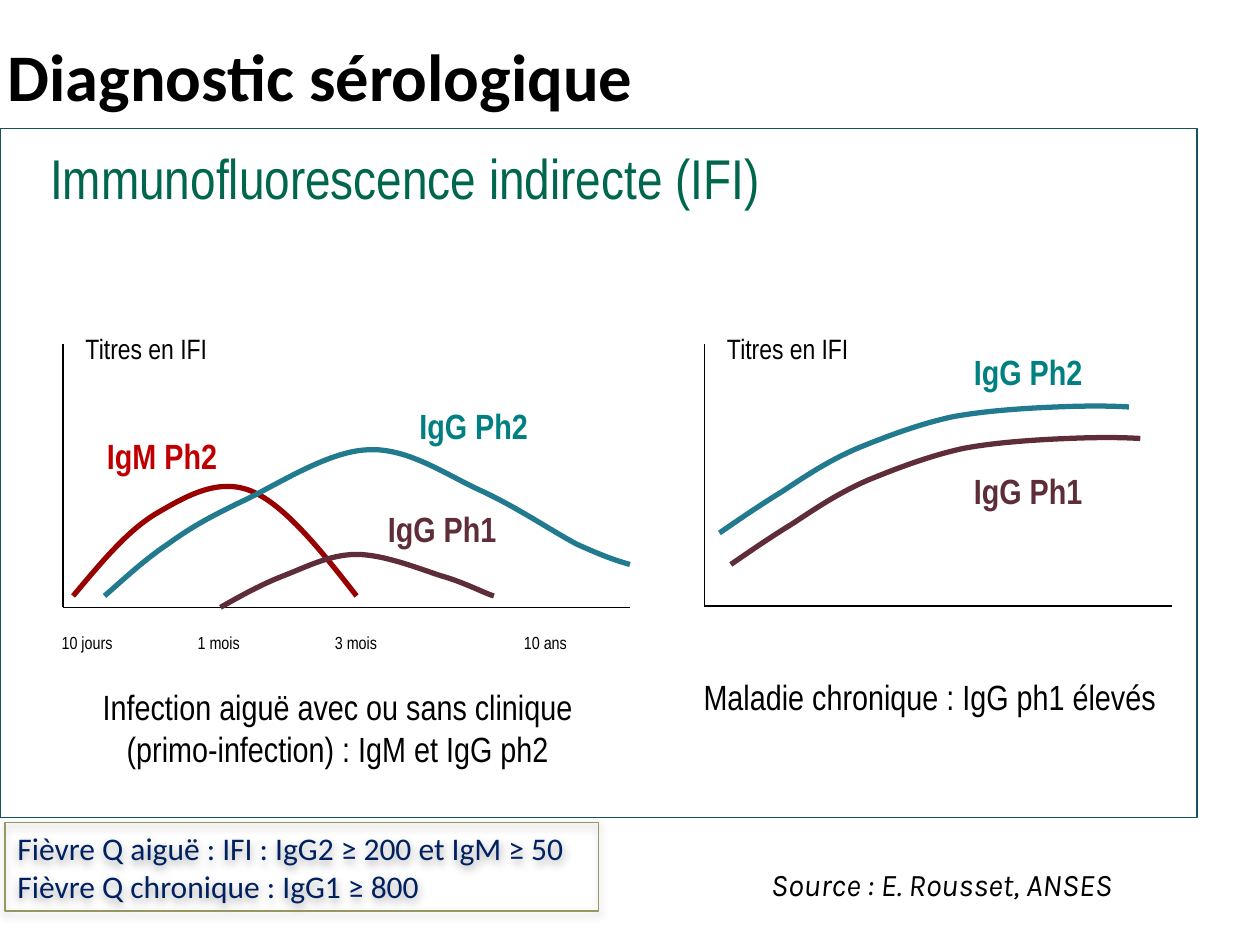
from lxml import etree
from pptx import Presentation
from pptx import util as u
from pptx.dml.color import RGBColor
from pptx.enum import shapes, text
from pptx.oxml import ns

COLORS = {
    "white": "FFFFFF", "black": "000000", "panel": "175160", "heading": "00664D",
    "igm_curve": "990000", "igm_label": "C00000", "phase2_curve": "227A8F",
    "phase2_label": "008080", "phase1": "5E2D37", "note_line": "979762", "note": "002060",
}
NARROW = "Arial Narrow"

IGM = [(0.08, 2), (0.3, 1.74), (0.51, 1.48), (0.75, 1.34), (0.99, 1.2),
       (1.24, 1.06), (1.5, 1.17), (1.76, 1.28), (2.05, 1.64), (2.33, 2)]
ACUTE_PHASE2 = [(0.33, 2), (0.49, 1.86), (0.65, 1.71), (0.83, 1.59), (1.01, 1.46),
                (1.15, 1.38), (1.42, 1.25), (1.68, 1.13), (2.1, 0.85), (2.42, 0.84),
                (2.74, 0.82), (3.06, 1.05), (3.33, 1.17), (3.61, 1.3), (3.89, 1.49),
                (4.08, 1.59), (4.28, 1.68), (4.39, 1.72), (4.5, 1.75)]
ACUTE_PHASE1 = [(1.25, 2.09), (1.41, 2), (1.57, 1.91), (1.75, 1.84), (1.93, 1.77),
                (2.12, 1.67), (2.33, 1.67), (2.54, 1.67), (2.82, 1.78), (3, 1.84),
                (3.18, 1.89), (3.35, 1.98), (3.42, 2)]
CHRONIC_PHASE2 = [(0.12, 1.5), (0.28, 1.39), (0.44, 1.28), (0.62, 1.17), (0.8, 1.05),
                  (0.98, 0.93), (1.21, 0.83), (1.43, 0.74), (1.69, 0.64), (1.96, 0.58),
                  (2.22, 0.53), (2.55, 0.51), (2.79, 0.5), (3.03, 0.49), (3.2, 0.49),
                  (3.37, 0.5)]
CHRONIC_PHASE1 = [(x + 0.09, y + 0.25) for x, y in CHRONIC_PHASE2]


def color(name):
    return RGBColor.from_string(COLORS[name])


def inches(values):
    return [u.Inches(value) for value in values]


def write(frame, lines, size, ink, font=NARROW, bold=False, italic=False,
          align=text.PP_ALIGN.LEFT):
    for index, line in enumerate(lines):
        paragraph = frame.paragraphs[0] if index == 0 else frame.add_paragraph()
        paragraph.alignment = align
        run = paragraph.add_run()
        run.text = line
        run.font.name = font
        run.font.size = u.Pt(size)
        run.font.bold = bold
        run.font.italic = italic
        run.font.color.rgb = color(ink)


def add_label(slide, box, lines, size, ink, wrap=False, **style):
    frame = slide.shapes.add_textbox(*inches(box)).text_frame
    frame.word_wrap = wrap
    if not wrap:
        frame.auto_size = text.MSO_AUTO_SIZE.SHAPE_TO_FIT_TEXT
    write(frame, lines, size, ink, **style)
    return frame


def add_rectangle(slide, box, fill=None, line=None):
    shape = slide.shapes.add_shape(shapes.MSO_SHAPE.RECTANGLE, *inches(box))
    shape.shadow.inherit = False
    if fill:
        shape.fill.solid()
        shape.fill.fore_color.rgb = color(fill)
    else:
        shape.fill.background()
    if line:
        shape.line.color.rgb = color(line)
        shape.line.width = u.Pt(0.75)
    else:
        shape.line.fill.background()
    return shape


def add_axis(slide, start, end):
    axis = slide.shapes.add_connector(shapes.MSO_CONNECTOR.STRAIGHT, *inches(start + end))
    axis.line.color.rgb = color("black")
    axis.line.width = u.Pt(0.75)
    etree.SubElement(axis._element.spPr, ns.qn("a:effectLst"))


def add_curve(slide, left, top, points, ink):
    start, *controls = [inches((left + x, top + y)) for x, y in points]
    builder = slide.shapes.build_freeform(*start)
    builder.add_line_segments(controls, close=False)
    shape = builder.convert_to_shape()
    segments = list(shape._element.iter(ns.qn("a:lnTo")))
    for index in range(0, len(segments), 3):
        bezier = etree.Element(ns.qn("a:cubicBezTo"))
        segments[index].addprevious(bezier)
        for segment in segments[index:index + 3]:
            bezier.append(segment[0])
            segment.getparent().remove(segment)
    shape.shadow.inherit = False
    shape.fill.background()
    shape.line.color.rgb = color(ink)
    shape.line.width = u.Pt(3)


def add_title(slide, box):
    title = slide.shapes.title
    title.left, title.top, title.width, title.height = inches(box)
    title.text_frame.vertical_anchor = text.MSO_ANCHOR.MIDDLE
    write(title.text_frame, ["Diagnostic sérologique"], 38, "black", "Calibri", bold=True)


def add_panel(slide, box):
    left, top, width, height = box
    add_rectangle(slide, box, "white", "panel")
    frame = add_label(slide, (left + 0.3, top + 0.07, width - 0.5, height - 0.22),
                      ["Immunofluorescence indirecte (IFI)"], 32, "heading", wrap=True)
    frame.paragraphs[0].space_before = u.Pt(6.4)


def add_titre_plot(slide, box, curves, names, ticks=()):
    left, top, width, height = box
    bottom = top + height
    add_axis(slide, (left, top), (left, bottom))
    add_axis(slide, (left, bottom), (left + width, bottom))
    for points, ink in curves:
        add_curve(slide, left, top, points, ink)
    for name, x, y, ink in names:
        add_label(slide, (left + x, top + y, 1.08, 0.43), [name], 20, ink, bold=True)
    for name, x, tick_width in ticks:
        add_label(slide, (left + x, bottom + 0.15, tick_width, 0.27), [name], 10, "black")
    add_label(slide, (left + 0.08, top - 0.15, 1.18, 0.37), ["Titres en IFI"], 16, "black")


def add_caption(slide, box, lines):
    add_label(slide, box, lines, 20, "black", wrap=True, align=text.PP_ALIGN.CENTER)


def add_threshold_note(slide, box):
    shape = add_rectangle(slide, box, line="note_line")
    effects = shape._element.spPr.find(ns.qn("a:effectLst"))
    shadow = etree.SubElement(effects, ns.qn("a:outerShdw"), blurRad=str(u.Pt(5)),
                              dist=str(u.Pt(1.8)), dir="5400000", rotWithShape="0")
    shade = etree.SubElement(shadow, ns.qn("a:srgbClr"), val=COLORS["black"])
    etree.SubElement(shade, ns.qn("a:alpha"), val="35000")
    frame = shape.text_frame
    frame.word_wrap = True
    frame.vertical_anchor = text.MSO_ANCHOR.MIDDLE
    write(frame, ["Fièvre Q aiguë : IFI : IgG2 ≥ 200 et IgM ≥ 50",
                  "Fièvre Q chronique : IgG1 ≥ 800"], 18, "note", "Calibri")


def main():
    presentation = Presentation()
    presentation.slide_width, presentation.slide_height = inches((10, 7.5))
    slide = presentation.slides.add_slide(presentation.slide_layouts[5])
    add_title(slide, (-0.04, -0.03, 10.04, 1.25))
    add_panel(slide, (0, 1.02, 9.5, 5.47))
    add_titre_plot(
        slide, (0.5, 2.73, 4.5, 2.09),
        [(IGM, "igm_curve"), (ACUTE_PHASE2, "phase2_curve"), (ACUTE_PHASE1, "phase1")],
        [("IgG Ph2", 2.73, 0.43, "phase2_label"), ("IgG Ph1", 2.48, 1.25, "phase1"),
         ("IgM Ph2", 0.25, 0.67, "igm_label")],
        [("10 jours", -0.11, 0.61), ("1 mois", 0.97, 0.54), ("3 mois", 2.06, 0.54),
         ("10 ans", 3.56, 0.54)])
    add_caption(slide, (0.22, 5.39, 4.92, 0.77),
                ["Infection aiguë avec ou sans clinique", "(primo-infection) : IgM et IgG ph2"])
    add_titre_plot(
        slide, (5.59, 2.73, 3.71, 2.08),
        [(CHRONIC_PHASE2, "phase2_curve"), (CHRONIC_PHASE1, "phase1")],
        [("IgG Ph1", 2.04, 0.95, "phase1"), ("IgG Ph2", 2.04, 0, "phase2_label")])
    add_caption(slide, (5.38, 5.31, 4, 0.43), ["Maladie chronique : IgG ph1 élevés"])
    add_label(slide, (6.02, 6.82, 3.25, 0.4), ["Source : E. Rousset, ANSES"], 18, "black",
              font="Karla", italic=True)
    add_threshold_note(slide, (0.04, 6.53, 4.71, 0.7))
    presentation.save("out.pptx")


if __name__ == "__main__":
    main()
